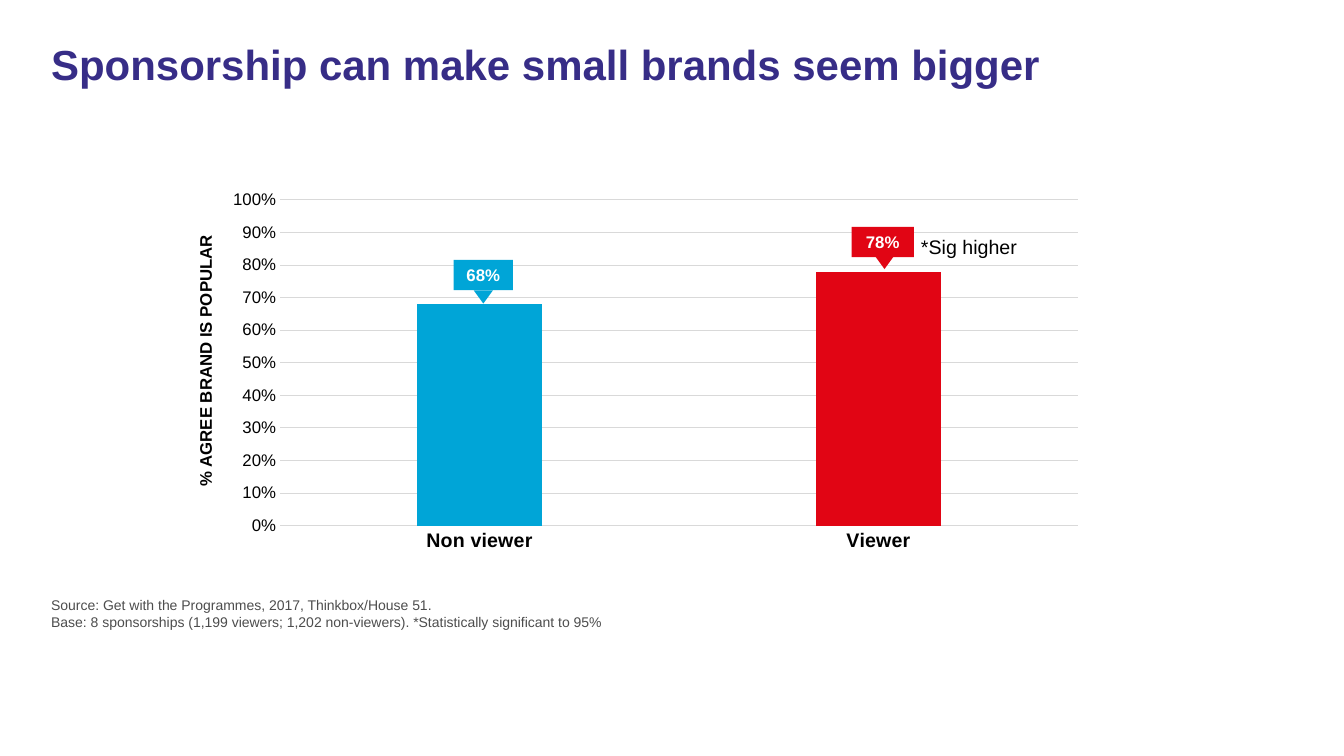
import pptx
import pptx.util
import pptx.dml.color
import pptx.chart.data
import pptx.enum.chart
import pptx.enum.shapes
import pptx.enum.text
import lxml.etree

Cm = pptx.util.Cm
Pt = pptx.util.Pt
kind = pptx.enum.shapes.MSO_SHAPE
side = pptx.enum.text.PP_ALIGN
BLUE, RED, BLACK, GREY = "00A5D7", "E10514", "000000", "D9D9D9"


def hue(code):
    return pptx.dml.color.RGBColor.from_string(code)


def style(font, size, code, bold=False):
    font.name = "Arial"
    font.size = Pt(size)
    font.bold = bold
    font.color.rgb = hue(code)


deck = pptx.Presentation()
deck.slide_width = Cm(33.87)
deck.slide_height = Cm(19.05)
slide = deck.slides.add_slide(deck.slide_layouts[6])

data = pptx.chart.data.CategoryChartData(number_format="0%")
data.categories = ["Non viewer", "Viewer"]
data.add_series("Series 1", [0.68, 0.78])
frame = slide.shapes.add_chart(
    pptx.enum.chart.XL_CHART_TYPE.COLUMN_CLUSTERED,
    Cm(5.44), Cm(4.62), Cm(22.17), Cm(9.47), data)
chart = frame.chart
style(chart.font, 10, BLACK)
chart.has_legend = False
chart.has_title = False

plot = chart.plots[0]
plot.gap_width = 219
plot.overlap = -27
plot.vary_by_categories = False
bars = plot.series[0]
bars.format.fill.solid()
bars.format.fill.fore_color.rgb = hue(BLUE)
point = bars.points[1].format.fill
point.solid()
point.fore_color.rgb = hue(RED)

none = pptx.enum.chart.XL_TICK_MARK.NONE
for axis, size, bold in [(chart.category_axis, 14, True),
                         (chart.value_axis, 12, False)]:
    axis.major_tick_mark = none
    axis.minor_tick_mark = none
    style(axis.tick_labels.font, size, BLACK, bold)

value = chart.value_axis
value.minimum_scale = 0
value.maximum_scale = 1
value.major_unit = 0.1
value.tick_labels.number_format = "0%"
value.tick_labels.number_format_is_linked = False
value.format.line.fill.background()
for line in [chart.category_axis.format.line, value.major_gridlines.format.line]:
    line.color.rgb = hue(GREY)
    line.width = Pt(0.75)

area = plot._element.getparent()
space = "{http://schemas.openxmlformats.org/drawingml/2006/chart}"
for old in area.findall(space + "layout"):
    area.remove(old)
layout = lxml.etree.Element(space + "layout")
area.insert(0, layout)
manual = lxml.etree.SubElement(layout, space + "manualLayout")
for name, val in [("layoutTarget", "inner"), ("xMode", "edge"), ("yMode", "edge"),
                  ("x", "0.073"), ("y", "0.044"), ("w", "0.907"), ("h", "0.867")]:
    lxml.etree.SubElement(manual, space + name).set("val", val)

for text, code, left, top, width, tip, base in [
        ("68%", BLUE, 11.43, 6.55, 1.5, 11.94, 7.32),
        ("78%", RED, 21.46, 5.72, 1.57, 22.05, 6.45)]:
    group = slide.shapes.add_group_shape()
    flag = group.shapes.add_shape(
        kind.RECTANGLE, Cm(left), Cm(top), Cm(width), Cm(0.76))
    arrow = group.shapes.add_shape(
        kind.ISOSCELES_TRIANGLE, Cm(tip), Cm(base), Cm(0.48), Cm(0.33))
    arrow.rotation = 180
    for shape in [flag, arrow]:
        shape.shadow.inherit = False
        shape.fill.solid()
        shape.fill.fore_color.rgb = hue(code)
        shape.line.fill.background()
    body = flag.text_frame
    body.margin_left = body.margin_right = 0
    body.vertical_anchor = pptx.enum.text.MSO_ANCHOR.MIDDLE
    para = body.paragraphs[0]
    para.alignment = side.CENTER
    run = para.add_run()
    run.text = text
    style(run.font, 12, "FFFFFF", True)

title = ["Sponsorship can make small brands seem bigger"]
source = ["Source: Get with the Programmes, 2017, Thinkbox/House 51.",
          "Base: 8 sponsorships (1,199 viewers; 1,202 non-viewers). "
          "*Statistically significant to 95%"]
for lines, place, size, code, bold, align, turn, pitch in [
        (title, (1.04, 0.99, 31.5, 2.84), 30, "372D87", True, side.LEFT, 0, 0.9),
        (source, (1.04, 14.91, 31.5, 0.84), 10, "4D4D4D", False, side.LEFT, 0, 1),
        (["*Sig higher"], (22.96, 5.79, 3.25, 0.86), 14, BLACK, False, side.LEFT, 0, 1),
        (["% AGREE BRAND IS POPULAR"], (1.12, 8.71, 8.1, 0.76), 12, BLACK, True,
         side.CENTER, 270, 1)]:
    box = slide.shapes.add_textbox(*[Cm(n) for n in place])
    box.rotation = turn
    body = box.text_frame
    body.word_wrap = True
    for i, text in enumerate(lines):
        para = body.add_paragraph() if i else body.paragraphs[0]
        para.alignment = align
        para.line_spacing = pitch
        run = para.add_run()
        run.text = text
        style(run.font, size, code, bold)

deck.save("out.pptx")
